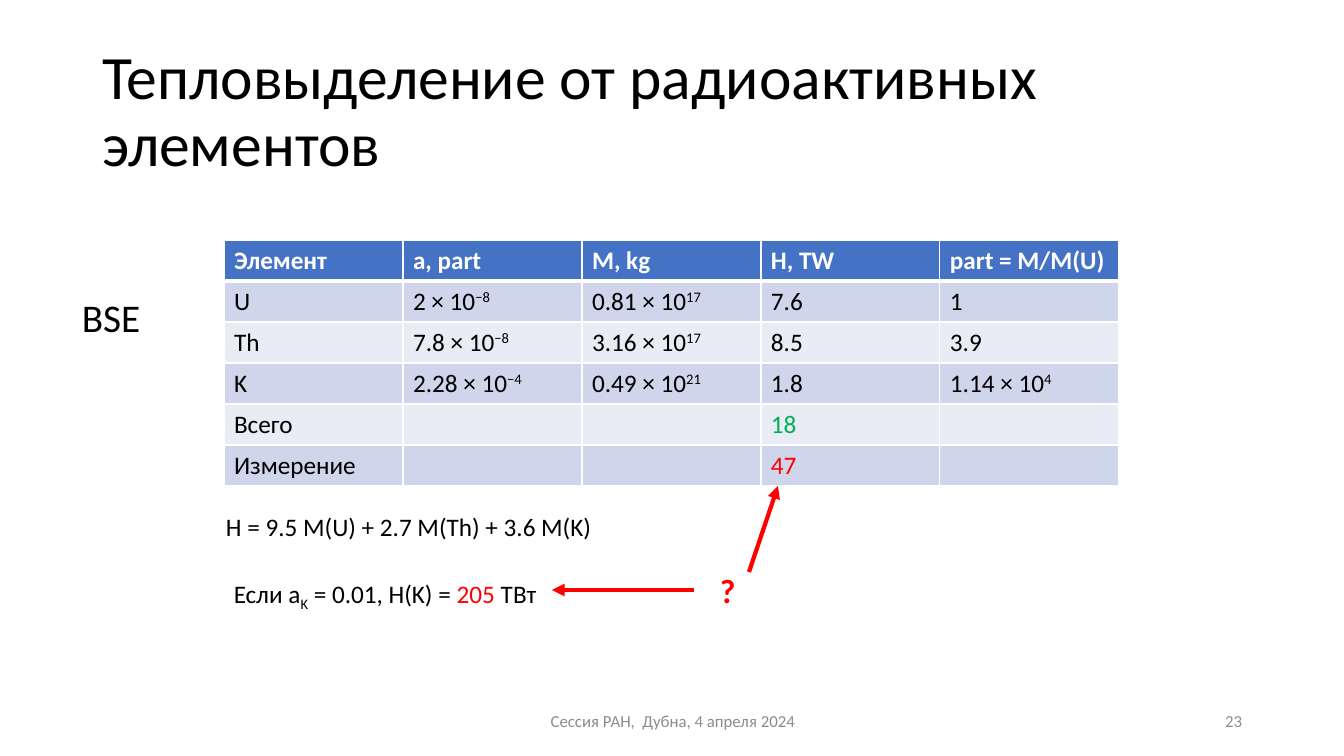
from lxml.etree import SubElement
from pptx import Presentation
from pptx.dml.color import RGBColor
from pptx.enum.shapes import MSO_CONNECTOR as Line
from pptx.enum.text import MSO_ANCHOR as Anchor, PP_ALIGN as Align
from pptx.oxml.ns import qn
from pptx.util import Pt

SCALE = 914400 / 100.8
BLACK, WHITE, GREY = "000000", "FFFFFF", "8C8C8C"
RED, GREEN, BLUE = "FF0000", "00B050", "4472C4"
BANDS = "CFD5EA", "E9EBF5"


def px(n):
    return round(n * SCALE)


def rgb(code):
    return RGBColor.from_string(code)


class Sheet:
    font = "Calibri"

    def __init__(self, deck):
        self.slide = deck.slides.add_slide(deck.slide_layouts[5])
        self.shapes = self.slide.shapes

    def style(self, para, size, color=BLACK, bold=False, align=Align.LEFT):
        font = para.font
        font.name, font.size, font.bold = self.font, Pt(size), bold
        font.color.rgb = rgb(color)
        para.alignment = align

    def run(self, para, text, shift=0, color=None, size=None, bold=None):
        """Add a run; shift is the percent raised (or lowered, if negative)."""
        run = para.add_run()
        run.text = text
        if shift:
            run.font._element.set("baseline", str(shift * 1000))
        if color:
            run.font.color.rgb = rgb(color)
        if size:
            run.font.size = Pt(size)
        if bold:
            run.font.bold = True

    def title(self, box, text):
        shape = self.shapes.title
        shape.left, shape.top, shape.width, shape.height = map(px, box)
        frame = shape.text_frame
        frame.text = text
        frame.vertical_anchor = Anchor.MIDDLE
        para = frame.paragraphs[0]
        para.line_spacing = 0.9
        self.style(para, 44)

    def text(self, box, text, size, color=BLACK, align=Align.LEFT,
             anchor=Anchor.TOP):
        """Add a text box and return its paragraph."""
        frame = self.shapes.add_textbox(*map(px, box)).text_frame
        frame.word_wrap = True
        frame.vertical_anchor = anchor
        para = frame.paragraphs[0]
        self.style(para, size, color, align=align)
        if text:
            self.run(para, text)
        return para

    def tab(self, para, pos):
        props = para._p.get_or_add_pPr()
        stops = SubElement(props, qn("a:tabLst"))
        SubElement(stops, qn("a:tab"), pos=str(px(pos)), algn="l")
        props.insert(props.index(props.find(qn("a:defRPr"))), stops)

    def arrow(self, *ends):
        line = self.shapes.add_connector(Line.STRAIGHT, *map(px, ends))
        line.line.color.rgb = rgb(RED)
        line.line.width = Pt(3)
        SubElement(line.line._get_or_add_ln(), qn("a:tailEnd"), type="triangle")
        SubElement(line._element.spPr, qn("a:effectLst"))

    def border(self, cell, side, width):
        """Draw one white side of a cell: L, R, T or B."""
        props = cell._tc.get_or_add_tcPr()
        edge = SubElement(props, qn("a:ln" + side), w=str(Pt(width)))
        fill = SubElement(edge, qn("a:solidFill"))
        SubElement(fill, qn("a:srgbClr"), val=WHITE)

    def table(self, left, top, wide, high, rows, tints):
        """Add a table; ^ in a value starts a superscript."""
        count = len(rows[0])
        grid = self.shapes.add_table(len(rows), count, px(left), px(top),
                                     px(wide * count), px(high * len(rows))).table
        for col in grid.columns:
            col.width = px(wide)
        for r, row in enumerate(rows):
            grid.rows[r].height = px(high)
            head = r == 0
            for c, value in enumerate(row):
                cell = grid.cell(r, c)
                for side in "LRTB":
                    thick = side == "B" and head or side == "T" and r == 1
                    self.border(cell, side, 3 if thick else 1)
                cell.fill.solid()
                cell.fill.fore_color.rgb = rgb(BLUE if head else BANDS[(r - 1) % 2])
                para = cell.text_frame.paragraphs[0]
                color = WHITE if head else tints.get(value, BLACK)
                self.style(para, 18, color, head)
                base, _, power = value.partition("^")
                if base:
                    self.run(para, base, color=color, bold=head)
                if power:
                    self.run(para, power, 30, color)


def main():
    deck = Presentation()
    deck.slide_width, deck.slide_height = px(1344), px(756)
    sheet = Sheet(deck)
    sheet.title((92, 40, 1159, 146), "Тепловыделение от радиоактивных элементов")
    sheet.table(224, 240, 179, 41, [
        ["Элемент", "a, part", "M, kg", "H, TW", "part = M/M(U)"],
        ["U", "2 × 10^−8", "0.81 × 10^17", "7.6", "1"],
        ["Th", "7.8 × 10^−8", "3.16 × 10^17", "8.5", "3.9"],
        ["K", "2.28 × 10^−4", "0.49 × 10^21", "1.8", "1.14 × 10^4"],
        ["Всего", "", "", "18", ""],
        ["Измерение", "", "", "47", ""],
    ], {"18": GREEN, "47": RED})
    sheet.text((216, 506, 910, 40), "H = 9.5 M(U) + 2.7 M(Th) + 3.6 M(K)", 18)

    case = sheet.text((224, 565, 896, 50), "Если a", 18)
    sheet.tab(case, 486)
    sheet.run(case, "K", -25)
    sheet.run(case, " = 0.01, H(K) = ")
    sheet.run(case, "205 ", color=RED)
    sheet.run(case, "ТВт\t")
    sheet.run(case, "?", color=RED, size=24, bold=True)

    sheet.arrow(694, 590, 552, 590)
    sheet.arrow(749, 572, 778, 486)
    sheet.text((72, 288, 115, 57), "BSE", 28)
    sheet.text((446, 701, 454, 40), "Сессия РАН,  Дубна, 4 апреля 2024", 12, GREY,
               Align.CENTER, Anchor.MIDDLE)
    sheet.text((950, 701, 302, 40), "23", 12, GREY, Align.RIGHT, Anchor.MIDDLE)
    deck.save("out.pptx")


if __name__ == "__main__":
    main()
